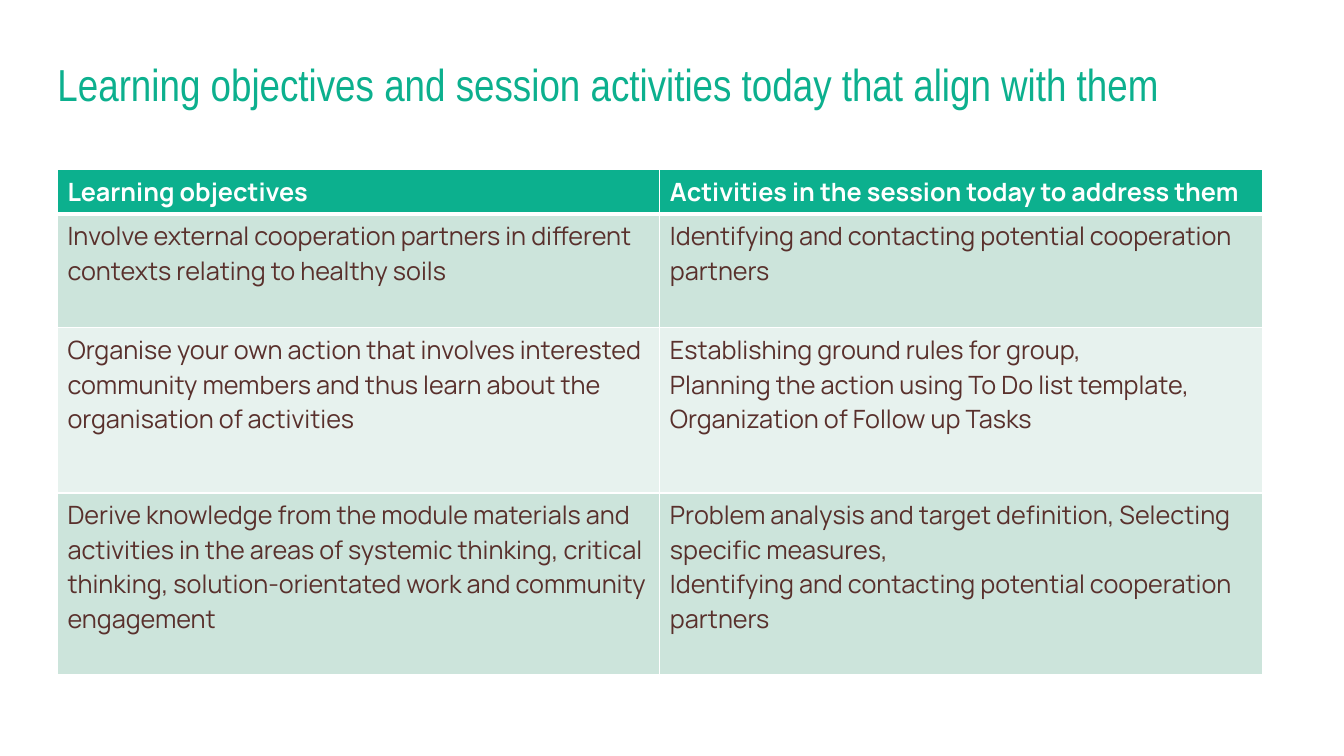
from lxml.etree import SubElement
from pptx import Presentation
from pptx.dml.color import RGBColor
from pptx.enum.text import MSO_ANCHOR, PP_ALIGN
from pptx.oxml.ns import qn
from pptx.util import Inches, Pt

GREEN = RGBColor(0x0C, 0xB0, 0x8E)
MINT = RGBColor(0xCC, 0xE4, 0xDB)
PALE_MINT = RGBColor(0xE7, 0xF2, 0xEE)
BROWN = RGBColor(0x59, 0x30, 0x2C)
WHITE = RGBColor(0xFF, 0xFF, 0xFF)

TITLE = "Learning objectives and session activities today that align with them"
# Each cell is a list of paragraphs
ROWS = [
    (["Learning objectives"],
     ["Activities in the session today to address them"]),
    (["Involve external cooperation partners in different contexts relating to healthy soils"],
     ["Identifying and contacting potential cooperation partners"]),
    (["Organise your own action that involves interested community members "
      "and thus learn about the organisation of activities"],
     ["Establishing ground rules for group,",
      "Planning the action using To Do list template,",
      "Organization of Follow up Tasks"]),
    (["Derive knowledge from the module materials and activities in the areas of systemic "
      "thinking, critical thinking, solution-orientated work and community engagement"],
     ["Problem analysis and target definition, Selecting specific measures,",
      "Identifying and contacting potential cooperation partners"]),
]
ROW_HEIGHTS = [0.43, 1.13, 1.64, 1.8]
COL_WIDTH = 5.975


def write(tf, paragraphs, *, size, font, color, bold=False, spacing=None):
    for i, text in enumerate(paragraphs):
        p = tf.paragraphs[0] if i == 0 else tf.add_paragraph()
        p.alignment = PP_ALIGN.LEFT
        p.line_spacing = spacing
        r = p.add_run()
        r.text = text
        r.font.size, r.font.name, r.font.bold = Pt(size), font, bold
        r.font.color.rgb = color


def set_borders(cell, widths):
    tcPr = cell._tc.get_or_add_tcPr()
    for side, width in widths.items():
        ln = SubElement(tcPr, qn(f"a:ln{side}"), w=str(Pt(width)))
        fill = SubElement(ln, qn("a:solidFill"))
        SubElement(fill, qn("a:srgbClr"), val=str(WHITE))


def add_title(s):
    title = s.shapes.title
    title.left, title.top = Inches(0.47), Inches(0.49)
    title.width, title.height = Inches(11.5), Inches(0.75)
    tf = title.text_frame
    tf.word_wrap = True
    tf.vertical_anchor = MSO_ANCHOR.MIDDLE
    write(tf, [TITLE], size=32, font="Arial Narrow", color=GREEN, spacing=0.9)


def add_objectives_table(s):
    table = s.shapes.add_table(len(ROWS), 2, Inches(0.57), Inches(1.68),
                               Inches(2 * COL_WIDTH), Inches(sum(ROW_HEIGHTS))).table
    for col in table.columns:
        col.width = Inches(COL_WIDTH)
    for i, (texts, height) in enumerate(zip(ROWS, ROW_HEIGHTS)):
        table.rows[i].height = Inches(height)
        header = i == 0
        fill = GREEN if header else MINT if i % 2 else PALE_MINT
        for cell, paragraphs in zip(table.rows[i].cells, texts):
            # A thick rule separates the header from the body
            set_borders(cell, {"L": 1, "R": 1, "T": 3 if i == 1 else 1, "B": 3 if header else 1})
            cell.fill.solid()
            cell.fill.fore_color.rgb = fill
            write(cell.text_frame, paragraphs, size=18, font="Manrope",
                  color=WHITE if header else BROWN, bold=header)


def main():
    prs = Presentation()
    prs.slide_width, prs.slide_height = Inches(13.33), Inches(7.5)
    s = prs.slides.add_slide(prs.slide_layouts[5])
    add_title(s)
    add_objectives_table(s)
    prs.save("out.pptx")


if __name__ == "__main__":
    main()
